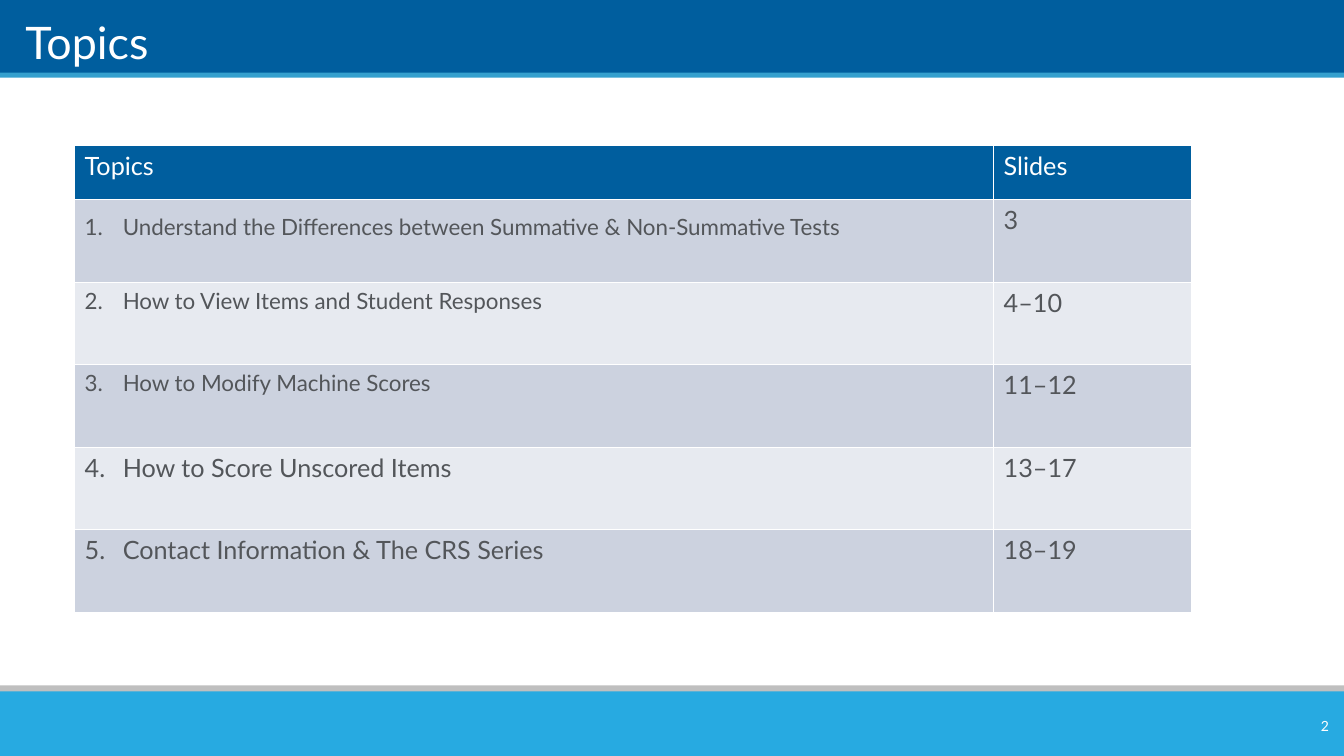
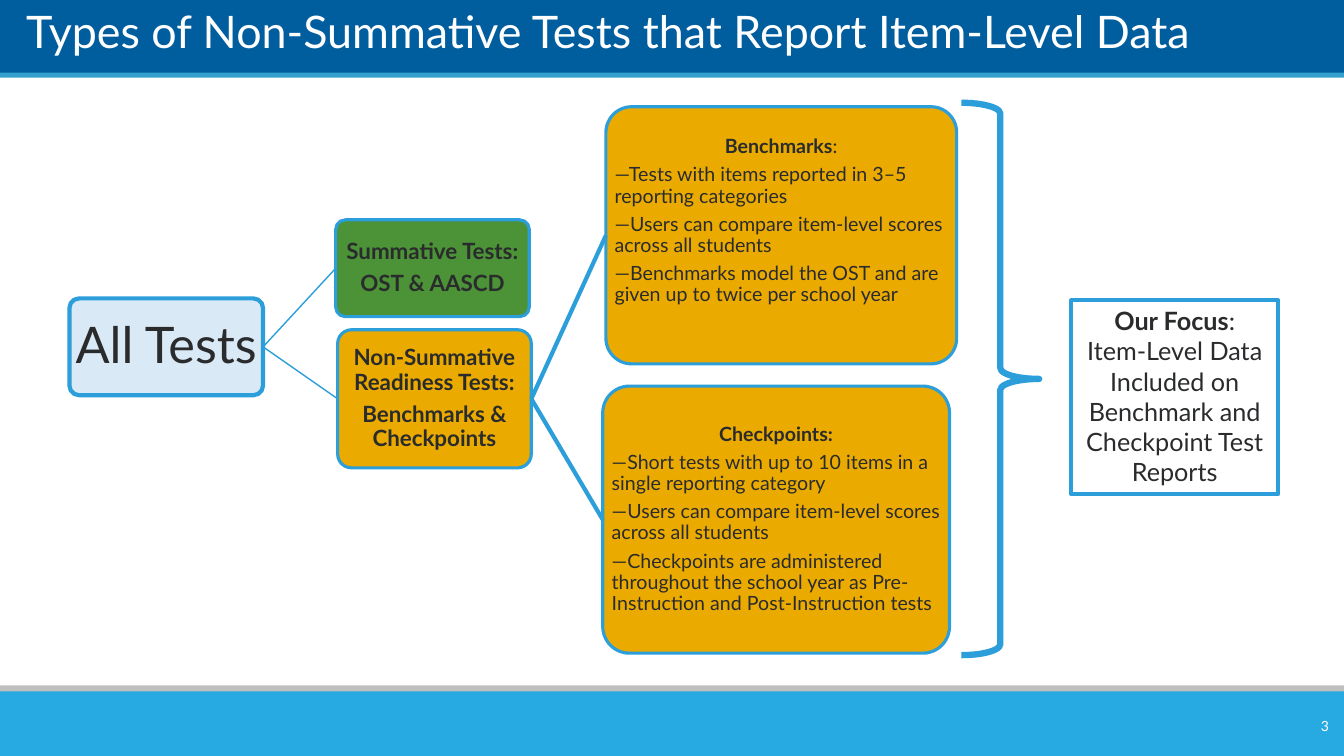
from dataclasses import dataclass
from lxml.etree import SubElement
from pptx import Presentation
from pptx.dml.color import RGBColor
from pptx.enum.shapes import MSO_CONNECTOR, MSO_SHAPE
from pptx.enum.text import MSO_ANCHOR, MSO_AUTO_SIZE, PP_ALIGN
from pptx.oxml.ns import qn
from pptx.util import Cm, Pt


@dataclass(frozen=True)
class Theme:
    font: str = "Lato"
    white: str = "FFFFFF"
    navy: str = "005E9E"
    trim: str = "35A0CE"
    silver: str = "BFBFBF"
    sky: str = "27AAE1"
    gray: str = "53565A"
    ink: str = "2A2B2D"
    edge: str = "2C9ED9"
    pale: str = "DAE9F6"
    gold: str = "EAAA00"
    green: str = "4C9237"
    stripes: tuple = ("CCD2DF", "E7EAF0")
    title: int = 32
    large: int = 18
    mid: int = 16
    small: int = 14
    hero: int = 36
    page: int = 10


T = Theme()
LEFT, CENTER, RIGHT = PP_ALIGN.LEFT, PP_ALIGN.CENTER, PP_ALIGN.RIGHT
WIDE, HIGH = 33.87, 19.05

# Shared bands: top, height, colour
BANDS = [
    (-0.03, 1.9, T.navy),
    (1.83, 0.13, T.trim),
    (17.27, 0.36, T.silver),
    (17.42, 1.63, T.sky),
]

# Topics slide: topic, slides, text size
HEADS = ("Topics", "Slides")
TOPICS = [
    ("Understand the Differences between Summative & Non-Summative Tests", "3", T.mid),
    ("How to View Items and Student Responses", "4–10", T.mid),
    ("How to Modify Machine Scores", "11–12", T.mid),
    ("How to Score Unscored Items", "13–17", T.large),
    ("Contact Information & The CRS Series", "18–19", T.large),
]
COLS = (23.16, 4.98)
HEAD_ROW, BODY_ROW = 1.37, 2.08

# Tests slide: each paragraph is a bold part and a plain part
BOXES = {
    "all": dict(at=(1.75, 7.52, 4.88, 2.44), fill=T.pale, line=3, size=T.hero,
                paras=[("", "All Tests")]),
    "sum": dict(at=(8.46, 5.54, 4.88, 2.44), fill=T.green, size=T.mid,
                paras=[("Summative Tests:", ""), ("OST & AASCD", "")]),
    "non": dict(at=(8.51, 8.31, 4.88, 3.48), fill=T.gold, size=T.mid,
                paras=[("Non-Summative Readiness Tests:", ""),
                       ("Benchmarks & Checkpoints", "")]),
    "bench": dict(at=(15.27, 2.69, 8.84, 6.48), fill=T.gold, size=T.small,
                  align=LEFT, base=0.73, paras=[
        ("Benchmarks", ":"),
        ("", "—Tests with items reported in 3–5 reporting categories"),
        ("", "—Users can compare item-level scores across all students"),
        ("", "—Benchmarks model the OST and are given up to twice per school year"),
    ]),
    "check": dict(at=(15.19, 9.73, 8.74, 6.73), fill=T.gold, size=T.small,
                  align=LEFT, paras=[
        ("Checkpoints:", ""),
        ("", "—Short tests with up to 10 items in a single reporting category"),
        ("", "—Users can compare item-level scores across all students"),
        ("", "—Checkpoints are administered throughout the school year as "
             "Pre-Instruction and Post-Instruction tests"),
    ]),
}
LINKS = [("all", "sum", 1), ("all", "non", 1), ("non", "bench", 3), ("non", "check", 3)]
BRACE = (24.23, 2.59, 1.96, 13.92)
FOCUS = (27, 7.57, 5.21, 4.88)
FOCUS_TEXT = [
    ("Our Focus", ":"),
    ("", "Item-Level Data Included on Benchmark and Checkpoint Test Reports"),
]


def rgb(code):
    return RGBColor.from_string(code)


def cms(at):
    return [Cm(n) for n in at]


def style(font, size, color, bold=False):
    font.name, font.size, font.bold = T.font, Pt(size), bold
    font.color.rgb = rgb(color)


def write(frame, text, size, color, align=LEFT):
    frame.text = text
    para = frame.paragraphs[0]
    para.alignment = align
    for run in para.runs:
        style(run.font, size, color)
    return para


def fill_text(frame, paras, size, align=CENTER, space=None, gap=0):
    frame.word_wrap = True
    for i, parts in enumerate(paras):
        para = frame.add_paragraph() if i else frame.paragraphs[0]
        para.alignment = CENTER if parts[0] else align
        para.line_spacing, para.space_after = space, Pt(gap)
        for text, bold in zip(parts, (True, False)):
            if text:
                run = para.add_run()
                run.text = text
                style(run.font, size, T.ink, bold)


def draw(slide, kind, at, fill=None, line=None):
    shape = slide.shapes.add_shape(kind, *cms(at))
    shape.shadow.inherit = False
    if fill:
        shape.fill.solid()
        shape.fill.fore_color.rgb = rgb(fill)
    else:
        shape.fill.background()
    if line:
        shape.line.color.rgb = rgb(T.edge)
        shape.line.width = Pt(line)
    else:
        shape.line.fill.background()
    return shape


def add_bands(slide):
    """Place the bands on the layout, so that every slide shows them."""
    tree = slide.slide_layout.shapes.element
    for i, (top, high, color) in enumerate(BANDS):
        band = draw(slide, MSO_SHAPE.RECTANGLE, (0, top, WIDE, high), color)
        tree.insert(2 + i, band.element)


def add_slide(deck, title, page, left, top):
    slide = deck.slides.add_slide(deck.slide_layouts[5])
    head = slide.shapes.title
    head.left, head.top, head.width, head.height = cms((left, top, 30.6, 1.45))
    frame = head.text_frame
    frame.auto_size = MSO_AUTO_SIZE.NONE
    frame.vertical_anchor = MSO_ANCHOR.BOTTOM
    frame.margin_left = frame.margin_right = frame.margin_top = frame.margin_bottom = 0
    write(frame, title, T.title, T.white)
    # Page number
    foot = slide.shapes.add_textbox(*cms((31.78, 17.91, 1.96, 0.76))).text_frame
    foot.word_wrap = True
    foot.vertical_anchor = MSO_ANCHOR.MIDDLE
    write(foot, str(page), T.page, T.white, RIGHT)
    return slide


def number(para, start):
    props = para._p.get_or_add_pPr()
    props.set("marL", str(Cm(0.96)))
    props.set("indent", str(-Cm(0.96)))
    SubElement(props, qn("a:buFont"), typeface="+mj-lt")
    SubElement(props, qn("a:buAutoNum"), type="arabicPeriod", startAt=str(start))


def set_cell(cell, text, size, color, fill):
    cell.fill.solid()
    cell.fill.fore_color.rgb = rgb(fill)
    return write(cell.text_frame, text, size, color)


def add_topics(slide):
    high = HEAD_ROW + BODY_ROW * len(TOPICS)
    at = cms((1.88, 3.66, sum(COLS), high))
    table = slide.shapes.add_table(len(TOPICS) + 1, len(COLS), *at).table
    for col, wide in zip(table.columns, COLS):
        col.width = Cm(wide)
    for i, row in enumerate(table.rows):
        row.height = Cm(BODY_ROW if i else HEAD_ROW)
    for i, text in enumerate(HEADS):
        set_cell(table.cell(0, i), text, T.large, T.white, T.navy)
    for i, (topic, pages, size) in enumerate(TOPICS, 1):
        fill = T.stripes[(i - 1) % 2]
        number(set_cell(table.cell(i, 0), topic, size, T.gray, fill), i)
        set_cell(table.cell(i, 1), pages, T.large, T.gray, fill)
    table.cell(1, 0).margin_top = Cm(0.36)


def add_box(slide, at, fill, size, paras, line=2.25, align=CENTER, base=0.03):
    box = draw(slide, MSO_SHAPE.ROUNDED_RECTANGLE, at, fill, line)
    box.adjustments[0] = 0.1
    frame = box.text_frame
    frame.vertical_anchor = MSO_ANCHOR.MIDDLE
    frame.margin_left = frame.margin_right = frame.margin_top = Cm(0.03)
    frame.margin_bottom = Cm(base)
    fill_text(frame, paras, size, align, 0.9, round(size * 0.35, 1))
    return box


def link(slide, start, end, width):
    line = slide.shapes.add_connector(MSO_CONNECTOR.STRAIGHT, 0, 0, 0, 0)
    line.begin_connect(start, 3)
    line.end_connect(end, 1)
    line.line.color.rgb = rgb(T.edge)
    line.line.width = Pt(width)
    SubElement(line.element.spPr, qn("a:effectLst"))


def add_tests(slide):
    boxes = {key: add_box(slide, **spec_) for key, spec_ in BOXES.items()}
    for start, end, width in LINKS:
        link(slide, boxes[start], boxes[end], width)
    brace = draw(slide, MSO_SHAPE.RIGHT_BRACE, BRACE, line=4.5)
    brace.adjustments[0], brace.adjustments[1] = 0.14, 0.5
    focus = draw(slide, MSO_SHAPE.RECTANGLE, FOCUS, line=3)
    focus.text_frame.vertical_anchor = MSO_ANCHOR.TOP
    fill_text(focus.text_frame, FOCUS_TEXT, T.large)


def main():
    deck = Presentation()
    deck.slide_width, deck.slide_height = cms((WIDE, HIGH))
    topics = add_slide(deck, "Topics", 2, 0.64, 0.28)
    add_bands(topics)
    add_topics(topics)
    title = "Types of Non-Summative Tests that Report Item-Level Data"
    add_tests(add_slide(deck, title, 3, 0.66, 0))
    deck.save("out.pptx")


if __name__ == "__main__":
    main()
